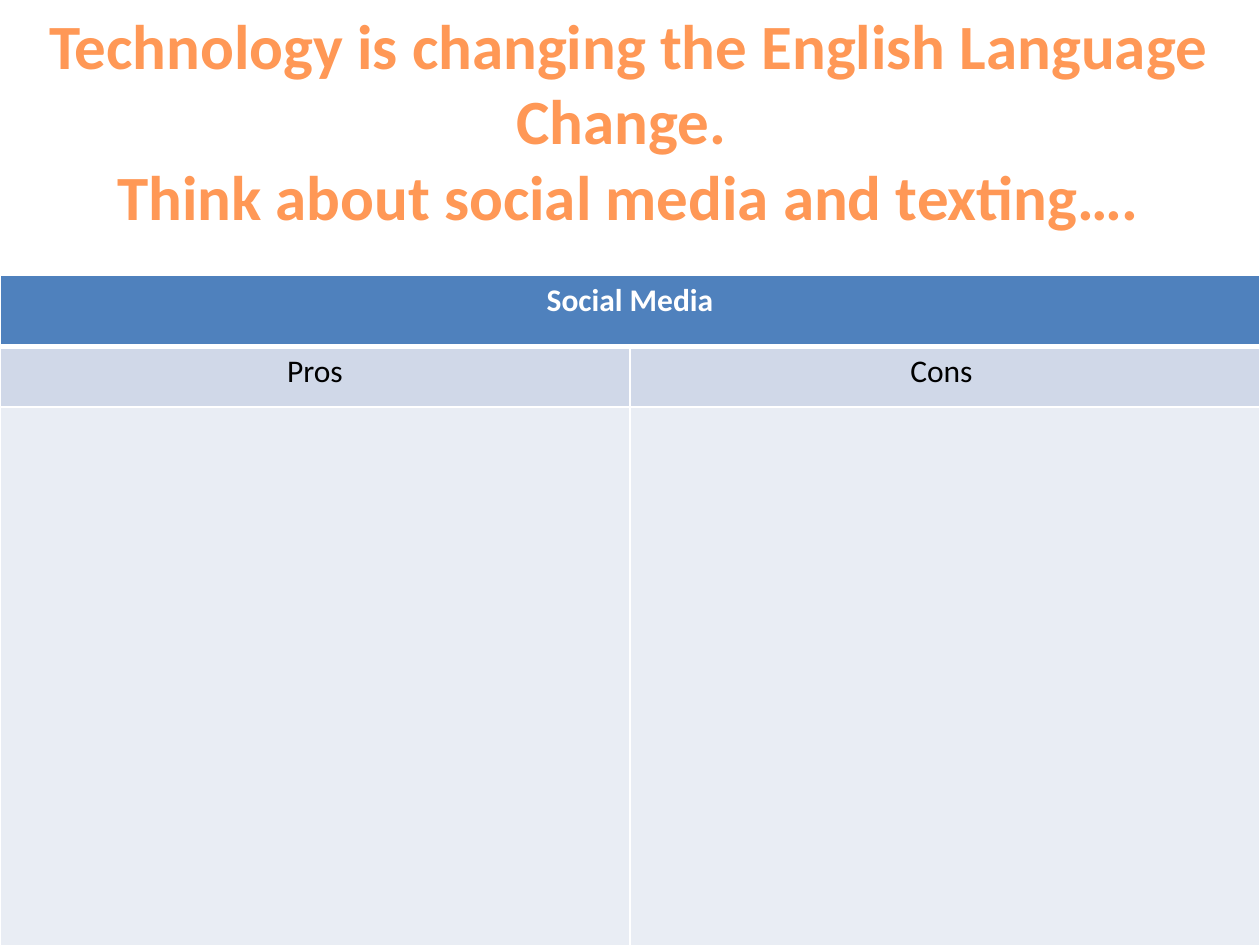
from dataclasses import dataclass

from lxml.etree import SubElement
from pptx import Presentation
from pptx.dml.color import RGBColor
from pptx.enum.text import MSO_ANCHOR, MSO_AUTO_SIZE, PP_ALIGN
from pptx.oxml.ns import qn
from pptx.util import Pt


@dataclass(frozen=True)
class Theme:
    font: str = "Calibri"
    title_size: int = 36
    cell_size: int = 18
    title: str = "FF9856"
    white: str = "FFFFFF"
    black: str = "000000"
    header: str = "4F81BD"
    label: str = "D0D8E8"
    answer: str = "E9EDF4"
    thin: int = 1
    thick: int = 3


def write(frame, *lines, font, size, color, bold=False, align=PP_ALIGN.CENTER):
    """Fill a text frame with one paragraph for each line."""
    for index, line in enumerate(lines):
        para = frame.paragraphs[0] if index == 0 else frame.add_paragraph()
        para.alignment = align
        span = para.add_run()
        span.text = line
        span.font.name = font
        span.font.size = Pt(size)
        span.font.bold = bold
        span.font.color.rgb = RGBColor.from_string(color)


class Page:
    def __init__(self, deck, theme):
        self.theme = theme
        self.slide = deck.slides.add_slide(deck.slide_layouts[5])

    def title(self, left, top, width, height, *lines):
        box = self.slide.shapes.title
        box.left, box.top, box.width, box.height = map(Pt, (left, top, width, height))
        frame = box.text_frame
        frame.word_wrap = True
        frame.auto_size = MSO_AUTO_SIZE.SHAPE_TO_FIT_TEXT
        frame.vertical_anchor = MSO_ANCHOR.TOP
        write(frame, *lines, font=self.theme.font, size=self.theme.title_size,
              color=self.theme.title, bold=True)

    def table(self, left, top, widths, heights):
        grid = self.slide.shapes.add_table(
            len(heights), len(widths), Pt(left), Pt(top),
            Pt(sum(widths)), Pt(sum(heights))).table
        for column, width in zip(grid.columns, widths):
            column.width = Pt(width)
        for row, height in zip(grid.rows, heights):
            row.height = Pt(height)
        return grid

    def cell(self, cell, text, fill, color, bold=False, above=1, below=1):
        # Borders come before the fill in the cell properties
        properties = cell._tc.get_or_add_tcPr()
        thin = self.theme.thin
        for side, weight in zip("LRTB", (thin, thin, above, below)):
            line = SubElement(properties, qn(f"a:ln{side}"), w=str(Pt(weight)))
            solid = SubElement(line, qn("a:solidFill"))
            SubElement(solid, qn("a:srgbClr"), val=self.theme.white)
        cell.fill.solid()
        cell.fill.fore_color.rgb = RGBColor.from_string(fill)
        if text:
            write(cell.text_frame, text, font=self.theme.font,
                  size=self.theme.cell_size, color=color, bold=bold)


def main():
    deck = Presentation()
    deck.slide_width, deck.slide_height = Pt(720), Pt(540)
    theme = Theme()
    page = Page(deck, theme)

    # Heading
    page.title(18.7, 0, 681, 138,
               "Technology is changing the English Language Change. ",
               "Think about social media and texting….")

    # Pros and cons table
    grid = page.table(0, 157, [360, 360], [41, 34.5, 393])
    grid.cell(0, 0).merge(grid.cell(0, 1))
    rows = [
        (("Social Media", ""), dict(fill=theme.header, color=theme.white,
                                    bold=True, below=theme.thick)),
        (("Pros", "Cons "), dict(fill=theme.label, color=theme.black,
                                 above=theme.thick)),
        (("", ""), dict(fill=theme.answer, color=theme.black)),
    ]
    for row, (texts, style) in enumerate(rows):
        for column, text in enumerate(texts):
            page.cell(grid.cell(row, column), text, **style)

    deck.save("out.pptx")


if __name__ == "__main__":
    main()
